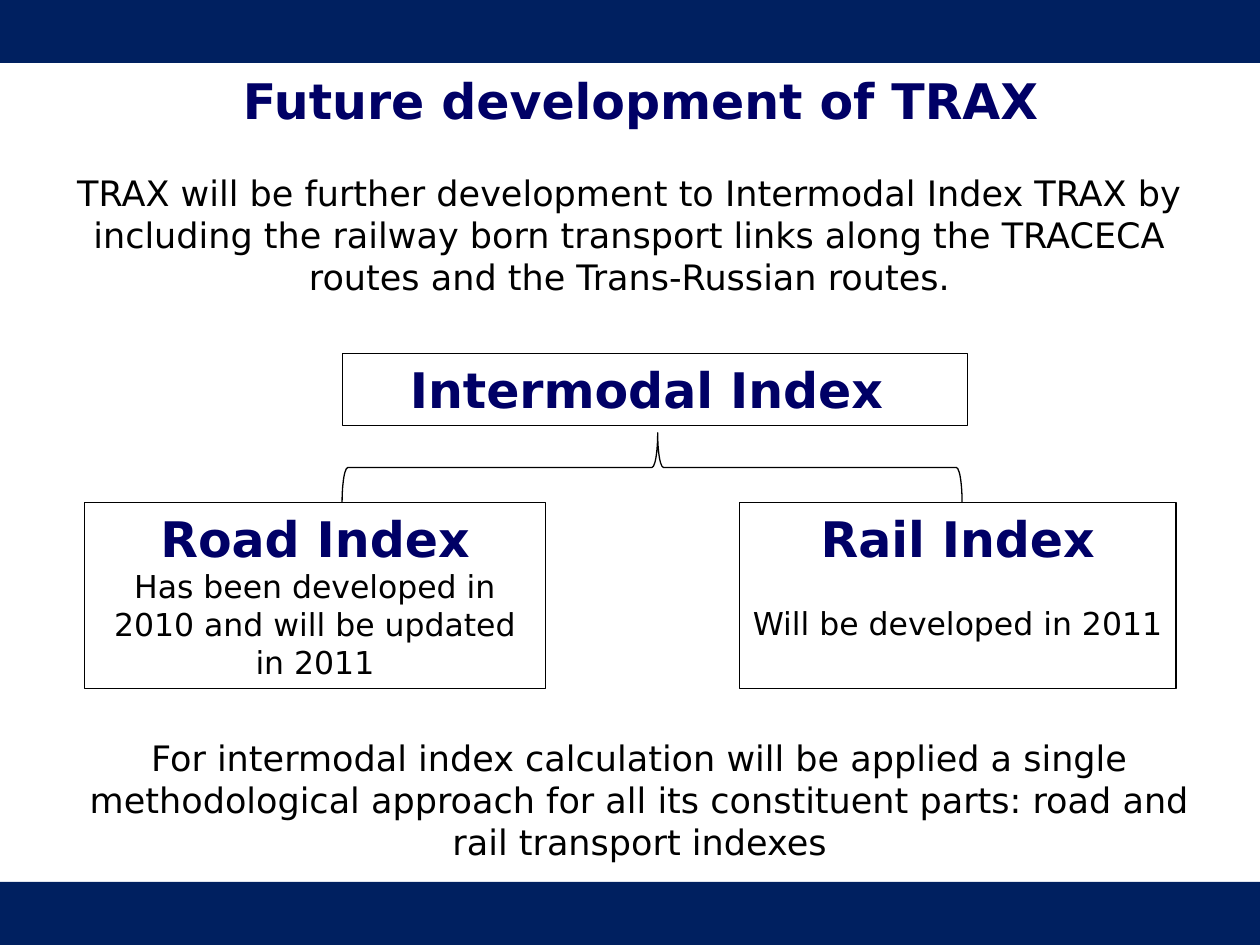
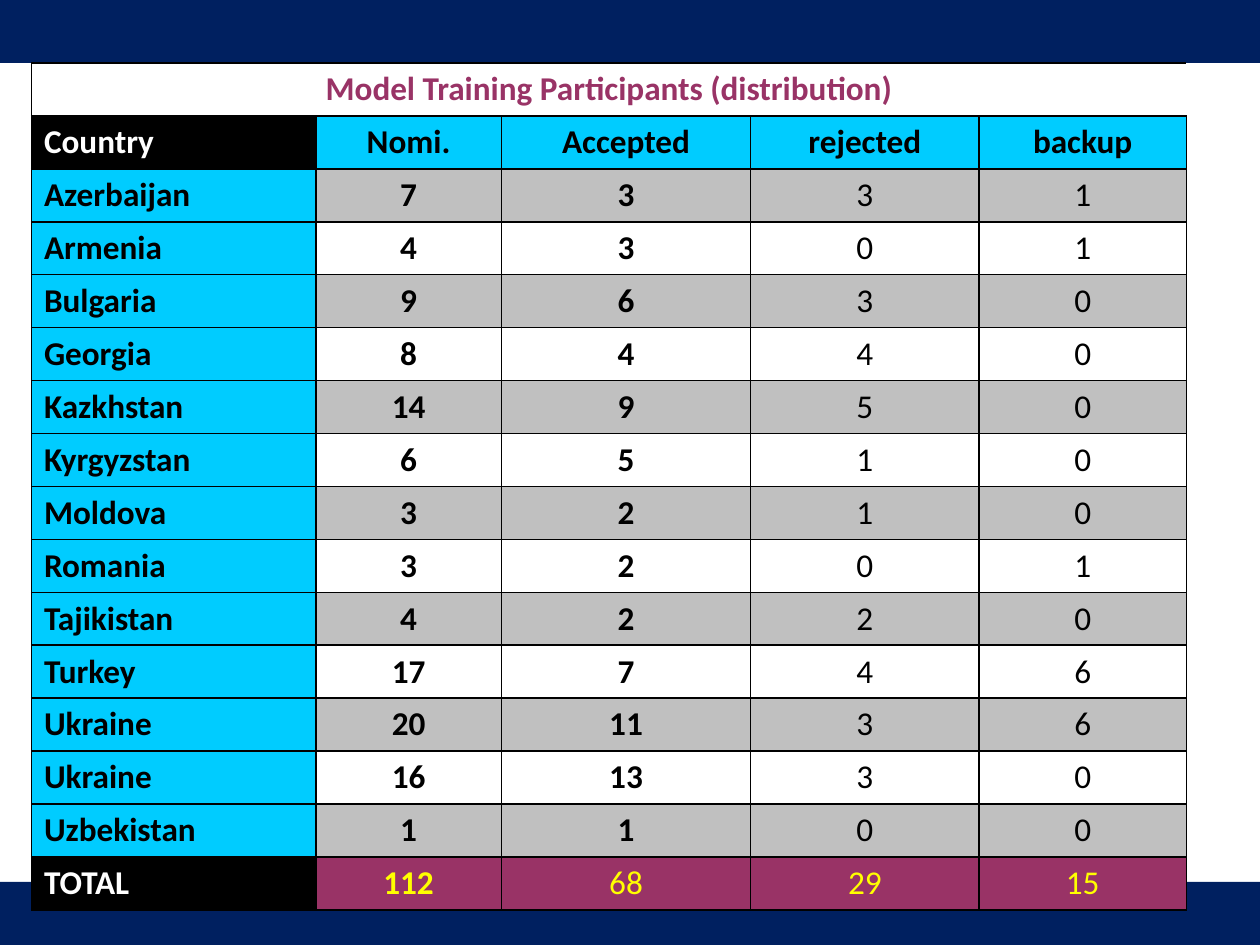
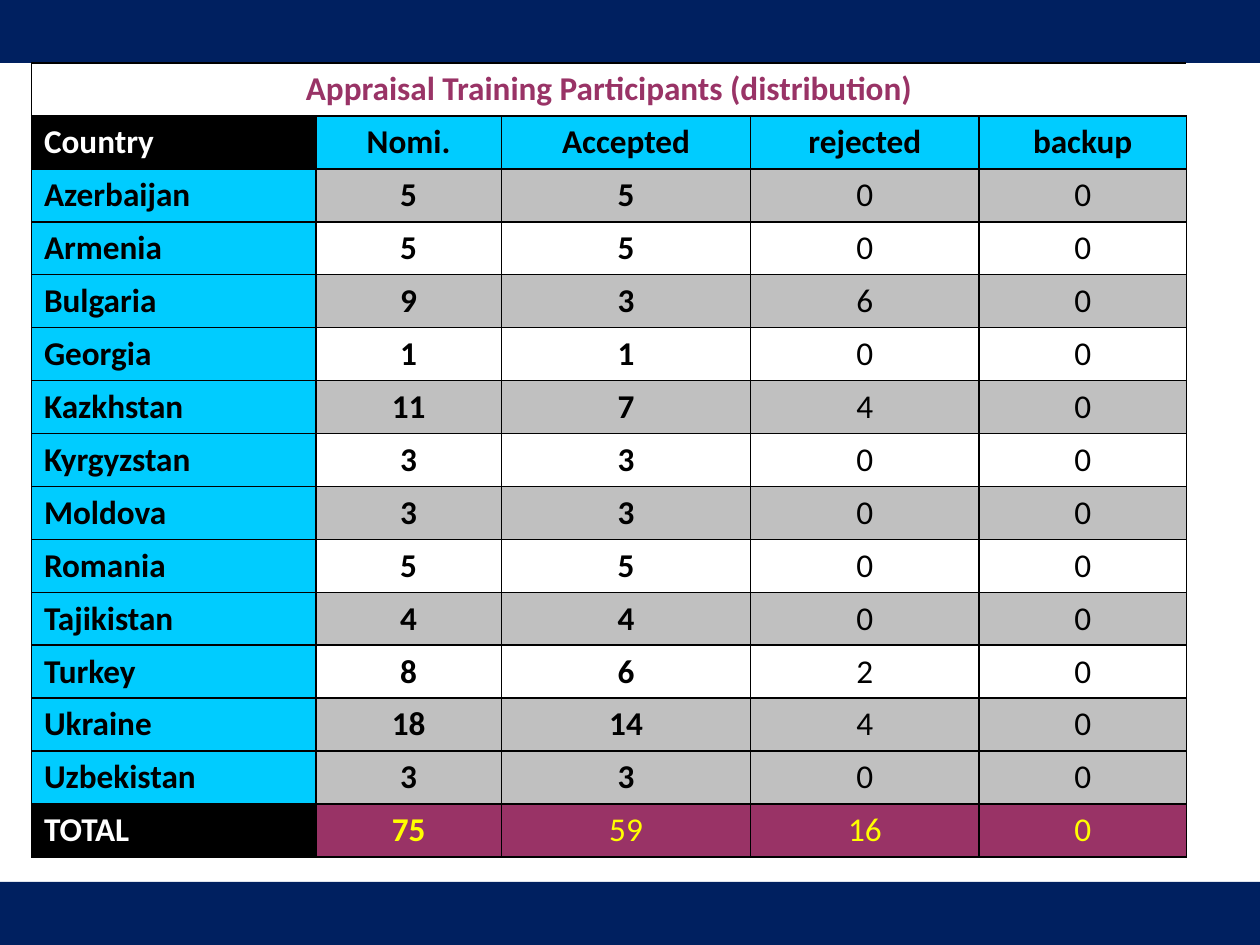
import pptx
import pptx.dml.color
import pptx.enum.shapes
import pptx.enum.text
import pptx.oxml
import pptx.oxml.ns
import pptx.util

Pt = pptx.util.Pt
SHAPES = pptx.enum.shapes.MSO_SHAPE
ALIGN = pptx.enum.text.PP_ALIGN
ANCHOR = pptx.enum.text.MSO_ANCHOR

BAND, NAVY, BLACK, WHITE = "002060", "000066", "000000", "FFFFFF"
CYAN, GREY, PLUM, YELLOW = "00CCFF", "C0C0C0", "993366", "FFFF00"

COL_WIDTHS = [162.5, 106, 142.5, 130.5, 118.5]
ROW_HEIGHT = 30.25
HEADINGS = ["Country", "Nomi.", "Accepted", "rejected", "backup"]

MODEL_ROWS = [
    ("Azerbaijan", 7, 3, 3, 1),
    ("Armenia", 4, 3, 0, 1),
    ("Bulgaria", 9, 6, 3, 0),
    ("Georgia", 8, 4, 4, 0),
    ("Kazkhstan", 14, 9, 5, 0),
    ("Kyrgyzstan", 6, 5, 1, 0),
    ("Moldova", 3, 2, 1, 0),
    ("Romania", 3, 2, 0, 1),
    ("Tajikistan", 4, 2, 2, 0),
    ("Turkey", 17, 7, 4, 6),
    ("Ukraine", 20, 11, 3, 6),
    ("Ukraine", 16, 13, 3, 0),
    ("Uzbekistan", 1, 1, 0, 0),
    ("TOTAL", 112, 68, 29, 15),
]
APPRAISAL_ROWS = [
    ("Azerbaijan", 5, 5, 0, 0),
    ("Armenia", 5, 5, 0, 0),
    ("Bulgaria", 9, 3, 6, 0),
    ("Georgia", 1, 1, 0, 0),
    ("Kazkhstan", 11, 7, 4, 0),
    ("Kyrgyzstan", 3, 3, 0, 0),
    ("Moldova", 3, 3, 0, 0),
    ("Romania", 5, 5, 0, 0),
    ("Tajikistan", 4, 4, 0, 0),
    ("Turkey", 8, 6, 2, 0),
    ("Ukraine", 18, 14, 4, 0),
    ("Uzbekistan", 3, 3, 0, 0),
    ("TOTAL", 75, 59, 16, 0),
]


def rgb(value):
    """Turn a hex string into a colour."""
    return pptx.dml.color.RGBColor.from_string(value)


class Deck:
    """Holds the shared style and the current slide."""

    font = "DejaVu Sans"
    table_font = "Calibri"

    def __init__(self):
        """Start a 10 by 7.5 inch presentation."""
        self.prs = pptx.Presentation()
        self.prs.slide_width, self.prs.slide_height = Pt(720), Pt(540)

    def slide(self):
        """Add a blank slide with the top and bottom bands."""
        self.s = self.prs.slides.add_slide(self.prs.slide_layouts[6])
        for top in (504, 0):
            self.shape(SHAPES.RECTANGLE, 0, top, 720, 36, fill=BAND)

    def shape(self, kind, x, y, w, h, fill=None, line=None):
        """Add a preset shape without a shadow."""
        sp = self.s.shapes.add_shape(kind, Pt(x), Pt(y), Pt(w), Pt(h))
        sp.shadow.inherit = False
        if fill:
            sp.fill.solid()
            sp.fill.fore_color.rgb = rgb(fill)
        else:
            sp.fill.background()
        if line:
            sp.line.color.rgb = rgb(line)
            sp.line.width = Pt(0.75)
        else:
            sp.line.fill.background()
        return sp

    def run(self, p, text, size, color, bold=False, font=None, align=ALIGN.CENTER):
        """Add one styled run to a paragraph."""
        p.alignment = align
        r = p.add_run()
        r.text = text
        r.font.name = font or self.font
        r.font.size = Pt(size)
        r.font.bold = bold
        r.font.color.rgb = rgb(color)

    def text(self, x, y, w, h, text, size=20, color=BLACK, bold=False, anchor=ANCHOR.TOP):
        """Add a wrapped, centred text box."""
        tf = self.s.shapes.add_textbox(Pt(x), Pt(y), Pt(w), Pt(h)).text_frame
        tf.word_wrap = True
        tf.vertical_anchor = anchor
        self.run(tf.paragraphs[0], text, size, color, bold)

    def title(self, text):
        """Add the slide title."""
        self.text(36, 36, 660, 41.75, text, 28, NAVY, True, ANCHOR.MIDDLE)

    def box(self, x, y, w, h, heading, note=None, gap=0):
        """Add an outlined box with a heading and an optional note."""
        tf = self.shape(SHAPES.RECTANGLE, x, y, w, h, line=BLACK).text_frame
        tf.word_wrap = True
        tf.vertical_anchor = ANCHOR.TOP
        self.run(tf.paragraphs[0], heading, 28, NAVY, True)
        if note:
            p = tf.add_paragraph()
            p.space_before = Pt(gap)
            self.run(p, note, 18, BLACK)

    def brace(self, x, y, w, h):
        """Add an upward brace, given its unrotated frame."""
        sp = self.shape(SHAPES.LEFT_BRACE, x, y, w, h, line=BLACK)
        sp.adjustments[0], sp.adjustments[1] = 0.083, 0.491
        sp.rotation = 90

    def borders(self, cell, sides):
        """Draw black borders on the given sides of a cell and none elsewhere."""
        ns = pptx.oxml.ns.nsdecls("a")
        solid = f'<a:solidFill><a:srgbClr val="{BLACK}"/></a:solidFill>'
        tcPr = cell._tc.get_or_add_tcPr()
        for i, side in enumerate("LRTB"):
            paint = solid if side in sides else "<a:noFill/>"
            xml = f'<a:ln{side} {ns} w="{Pt(1)}">{paint}</a:ln{side}>'
            tcPr.insert(i, pptx.oxml.parse_xml(xml))

    def cell(self, cell, text, color, fill=None, bold=True, align=ALIGN.CENTER, sides="LRTB"):
        """Fill, write and border one table cell."""
        cell.vertical_anchor = ANCHOR.BOTTOM
        if fill:
            cell.fill.solid()
            cell.fill.fore_color.rgb = rgb(fill)
        else:
            cell.fill.background()
        if text:
            self.run(cell.text_frame.paragraphs[0], text, 19, color, bold, self.table_font, align)
        self.borders(cell, sides)

    def participants(self, title, rows):
        """Add a table of participants by country under a spanning title."""
        n = len(rows) + 2
        frame = self.s.shapes.add_table(n, len(COL_WIDTHS), Pt(18), Pt(36),
                                        Pt(sum(COL_WIDTHS)), Pt(n * ROW_HEIGHT))
        table = frame.table
        table.first_row = table.horz_banding = False
        for col, width in zip(table.columns, COL_WIDTHS):
            col.width = Pt(width)
        for row in table.rows:
            row.height = Pt(ROW_HEIGHT)
        table.cell(0, 0).merge(table.cell(0, len(COL_WIDTHS) - 1))
        for c in range(len(COL_WIDTHS)):
            self.cell(table.cell(0, c), "" if c else title, PLUM, sides="TB" if c else "LTB")
        for i, row in enumerate([HEADINGS, *rows]):
            head, total = i == 0, i == len(rows)
            banded = i % 2 == 1 or i == len(rows) - 1
            for c, value in enumerate(row):
                if c == 0:
                    edge = head or total
                    color, fill = (WHITE, BLACK) if edge else (BLACK, CYAN)
                elif total:
                    color, fill = YELLOW, PLUM
                else:
                    color, fill = BLACK, CYAN if head else GREY if banded else None
                bold = head or c < (2 if total else 3)
                align = ALIGN.CENTER if c else ALIGN.LEFT
                self.cell(table.cell(i + 1, c), str(value), color, fill, bold, align)


def main():
    """Build the three slides."""
    d = Deck()

    d.slide()
    d.title("Future development of TRAX")
    d.box(195.75, 202, 357, 41.25, "Intermodal Index ")
    d.box(48.25, 287, 263.5, 106.5, "Road Index",
          "Has been developed in 2010 and will be updated in 2011")
    d.box(422.5, 287, 249.5, 106.5, "Rail Index", "Will be developed in 2011", gap=21)
    d.brace(352.8, 90, 39.6, 354.25)
    d.text(25.25, 94.25, 669, 80,
           "TRAX will be further development to Intermodal Index TRAX by including the railway "
           "born transport links along the TRACECA routes and the Trans-Russian routes.")
    d.text(31, 417.5, 669, 80,
           "For intermodal index calculation will be applied a single methodological approach "
           "for all its constituent parts: road and rail transport indexes")

    d.slide()
    d.participants("Model Training Participants (distribution)", MODEL_ROWS)

    d.slide()
    d.participants("Appraisal Training Participants (distribution)", APPRAISAL_ROWS)

    d.prs.save("out.pptx")


if __name__ == "__main__":
    main()
